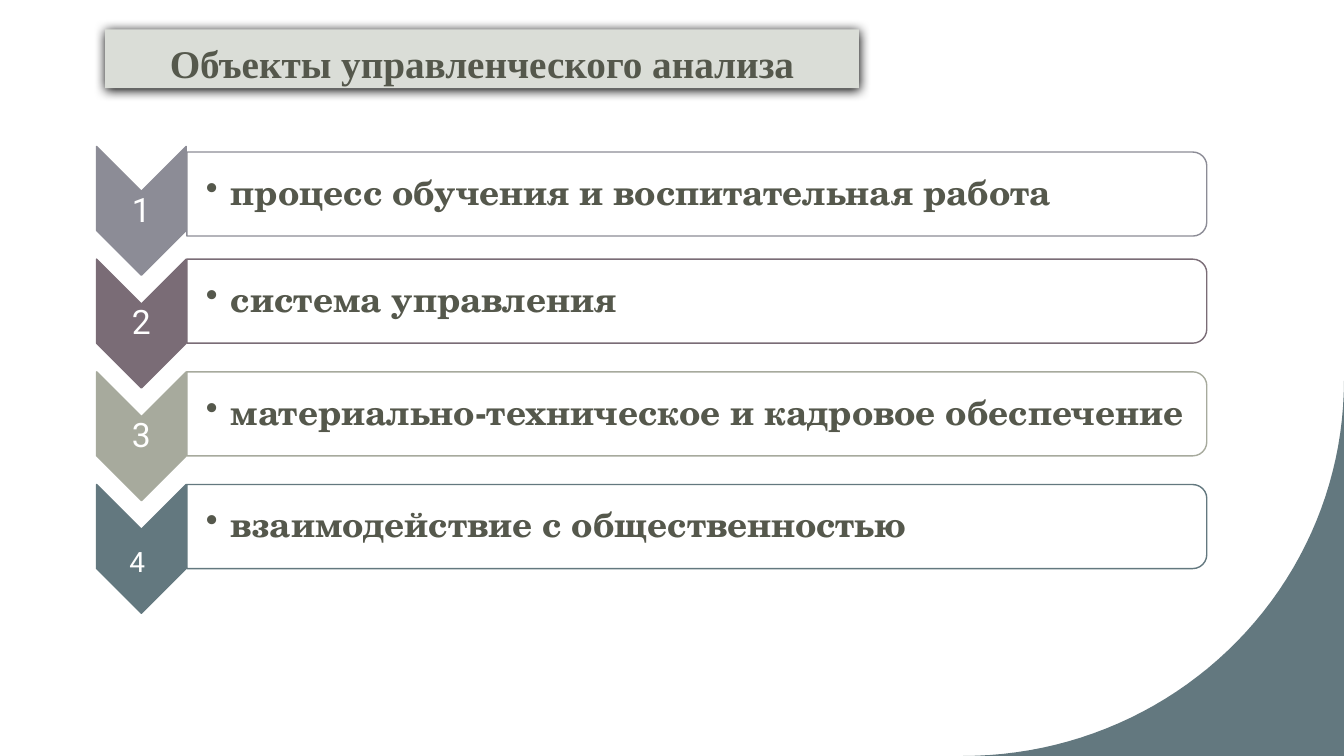
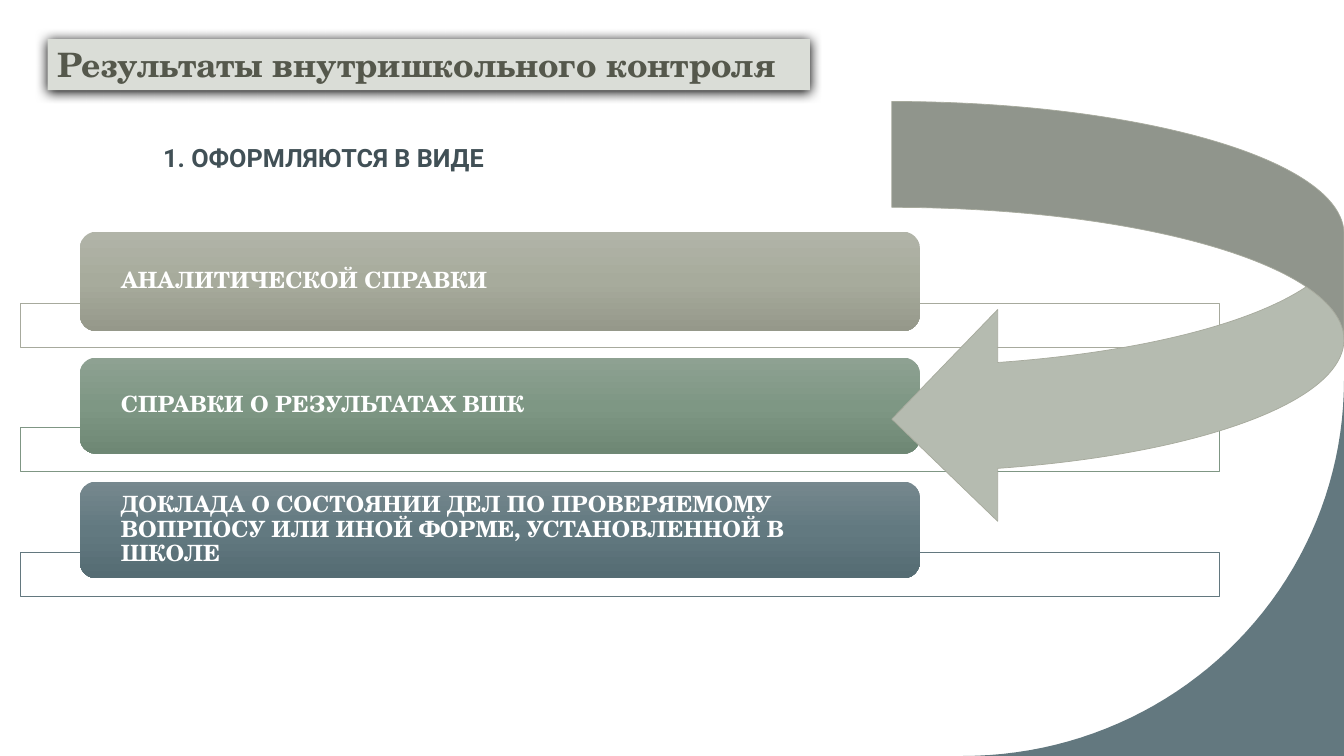
import math

from pptx import Presentation
from pptx.dml.color import RGBColor
from pptx.enum import shapes, text
from pptx.oxml import parse_xml
from pptx.oxml.ns import nsdecls, qn
from pptx.util import Pt

WIDTH, HEIGHT = 960, 540
WHITE, BAND, INK, DARK_TEAL = "FFFFFF", "DADDD7", "55584C", "415056"
GREY, PLUM, SAGE, GREEN, TEAL = "8C8C96", "7A6C76", "A7AA9D", "7F9684", "63787F"
ARROW = "B5BBB0"
SERIF, SANS, TITLE_FONT = "TeX Gyre Schola", "Roboto", "Times New Roman"
KIND = shapes.MSO_SHAPE
LEFT, CENTER = text.PP_ALIGN.LEFT, text.PP_ALIGN.CENTER
TOP, MIDDLE = text.MSO_ANCHOR.TOP, text.MSO_ANCHOR.MIDDLE


def color(code):
    return RGBColor.from_string(code)


def paint(shape, fill, line=None, line_width=1):
    shape.shadow.inherit = False
    shape.fill.solid()
    shape.fill.fore_color.rgb = color(fill)
    if line:
        shape.line.color.rgb = color(line)
        shape.line.width = Pt(line_width)
    else:
        shape.line.fill.background()


def add_box(page, kind, box, fill, line=None, line_width=1, turned=False):
    """Add a preset shape; a turned one is rotated by 90 degrees to cover box."""
    left, top, width, height = box
    if turned:
        left, top = left + (width - height) / 2, top + (height - width) / 2
        width, height = height, width
    shape = page.shapes.add_shape(kind, Pt(left), Pt(top), Pt(width), Pt(height))
    if turned:
        shape.rotation = 90
    paint(shape, fill, line, line_width)
    return shape


def write(shape, words, size, font, ink, bold=True, align=LEFT, anchor=MIDDLE,
          insets=(7.2, 3.6, 7.2, 3.6), spacing=1.0):
    frame = shape.text_frame
    frame.text = words
    frame.word_wrap = True
    frame.vertical_anchor = anchor
    (frame.margin_left, frame.margin_top,
     frame.margin_right, frame.margin_bottom) = map(Pt, insets)
    para = frame.paragraphs[0]
    para.alignment = align
    para.line_spacing = spacing
    span = para.runs[0]
    span.font.size = Pt(size)
    span.font.name = font
    span.font.bold = bold
    span.font.color.rgb = color(ink)
    return para


def add_label(page, box, words, *style, **options):
    return write(page.shapes.add_textbox(*map(Pt, box)), words, *style, **options)


def add_bullet(para, indent):
    props = para._p.get_or_add_pPr()
    props.set("marL", str(Pt(indent)))
    props.set("indent", str(-Pt(indent)))
    props.append(parse_xml(f'<a:buChar {nsdecls("a")} char="•"/>'))


def cast_shadow(shape):
    effects = shape._element.spPr.find(qn("a:effectLst"))
    effects.append(parse_xml(
        f'<a:outerShdw {nsdecls("a")} blurRad="{Pt(8.5)}" dist="{Pt(1)}" '
        'dir="5400000" algn="ctr" rotWithShape="0">'
        '<a:srgbClr val="000000"/></a:outerShdw>'))


def shade(shape, stops):
    """Fill the shape from top to bottom with evenly spaced colours."""
    step = 100000 // (len(stops) - 1)
    marks = "".join(f'<a:gs pos="{i * step}"><a:srgbClr val="{stop}"/></a:gs>'
                    for i, stop in enumerate(stops))
    props = shape._element.spPr
    props.replace(props.find(qn("a:solidFill")), parse_xml(
        f'<a:gradFill {nsdecls("a")} rotWithShape="1"><a:gsLst>{marks}</a:gsLst>'
        '<a:lin ang="5400000" scaled="0"/></a:gradFill>'))


def add_corner(page, left, top):
    """Fill the bottom right corner outside a quarter ellipse."""
    across, down = WIDTH - left, HEIGHT - top
    angles = [math.radians(degree) for degree in range(0, 91, 2)]
    arc = [(left + across * math.cos(a), top + down * math.sin(a)) for a in angles]
    builder = page.shapes.build_freeform(Pt(WIDTH), Pt(HEIGHT))
    builder.add_line_segments([(Pt(x), Pt(y)) for x, y in arc], close=True)
    paint(builder.convert_to_shape(), TEAL)


def add_page(deck):
    page = deck.slides.add_slide(deck.slide_layouts[6])
    add_corner(page, 688, 272)
    return page


def add_title(page, box, words, size, font, **options):
    band = add_box(page, KIND.RECTANGLE, box, BAND)
    cast_shadow(band)
    write(band, words, size, font, INK, anchor=TOP, **options)


def add_step(page, box, number, words, tone, bar_drop=0, number_size=24,
             number_shift=(0, 0)):
    left, top, width, height = box
    arrow_width, bar_height, inset = 64, 60, 1.5
    add_box(page, KIND.CHEVRON, (left, top, arrow_width, height), tone, tone,
            turned=True)
    across, down = number_shift
    add_label(page, (left + across, top + 32.5 + down, arrow_width, 27.5), number,
              number_size, SANS, WHITE, bold=False, align=CENTER,
              insets=(inset,) * 4, spacing=0.9)
    bar_left, bar_top = left + arrow_width + 0.5, top + bar_drop
    bar_width = width - arrow_width - 0.5
    add_box(page, KIND.ROUND_2_SAME_RECTANGLE,
            (bar_left, bar_top, bar_width, bar_height), WHITE, tone, turned=True)
    para = add_label(page, (bar_left, bar_top + 3, bar_width - 3, 54), words, 25,
                     SERIF, INK, insets=(13.5, inset, inset, inset), spacing=0.9)
    add_bullet(para, 18)


def add_card(page, box, words, tone, stops, rise, card_height):
    """Draw a thin frame at box and a shaded card which starts above it."""
    left, top, _, _ = box
    add_box(page, KIND.RECTANGLE, box, WHITE, tone, 0.5)
    card_box = (left + 42.5, top - rise, 600, card_height)
    card = add_box(page, KIND.ROUNDED_RECTANGLE, card_box, tone)
    shade(card, stops)
    write(card, words, 16, SERIF, WHITE, insets=(26, 0, 26, 0), spacing=0.9)


def build_objects(deck):
    page = add_page(deck)
    add_title(page, (75, 21, 538.5, 42), "Объекты управленческого анализа", 28,
              TITLE_FONT, align=CENTER, spacing=1.1)
    steps = [
        ("процесс обучения и воспитательная работа", GREY, {"bar_drop": 4}),
        ("система управления", PLUM, {}),
        ("материально-техническое и кадровое обеспечение", SAGE, {}),
        ("взаимодействие с общественностью", TEAL,
         {"number_size": 20, "number_shift": (-3, 10)}),
    ]
    for i, (words, tone, options) in enumerate(steps):
        add_step(page, (69, 104.6 + i * 80.5, 793, 92), str(i + 1), words, tone,
                 **options)


def build_results(deck):
    page = add_page(deck)
    cards = [
        ("АНАЛИТИЧЕСКОЙ СПРАВКИ", SAGE, ("B1B4A8", "A7AB9C", "95988A"), 51, 71),
        ("СПРАВКИ О РЕЗУЛЬТАТАХ ВШК", GREEN, ("8EA192", "7E9784", "6E8774"), 50, 68.5),
        ("ДОКЛАДА О СОСТОЯНИИ ДЕЛ ПО ПРОВЕРЯЕМОМУ ВОПРПОСУ ИЛИ ИНОЙ ФОРМЕ, "
         "УСТАНОВЛЕННОЙ В ШКОЛЕ", TEAL, ("76888E", "627980", "556C73"), 50.5, 69),
    ]
    for i, card in enumerate(cards):
        add_card(page, (14.5, 216.5 + i * 89, 856.5, 31.5), *card)
    add_box(page, KIND.CURVED_LEFT_ARROW, (637, 72.5, 323, 302.5), ARROW, SAGE, 0.5)
    add_title(page, (34, 28, 544.5, 36.5), "Результаты внутришкольного контроля",
              24, SERIF)
    add_label(page, (109.5, 98, 279, 29), "1. ОФОРМЛЯЮТСЯ В ВИДЕ", 18, SANS,
              DARK_TEAL, anchor=TOP)


def main():
    deck = Presentation()
    deck.slide_width, deck.slide_height = Pt(WIDTH), Pt(HEIGHT)
    build_objects(deck)
    build_results(deck)
    deck.save("out.pptx")


if __name__ == "__main__":
    main()
